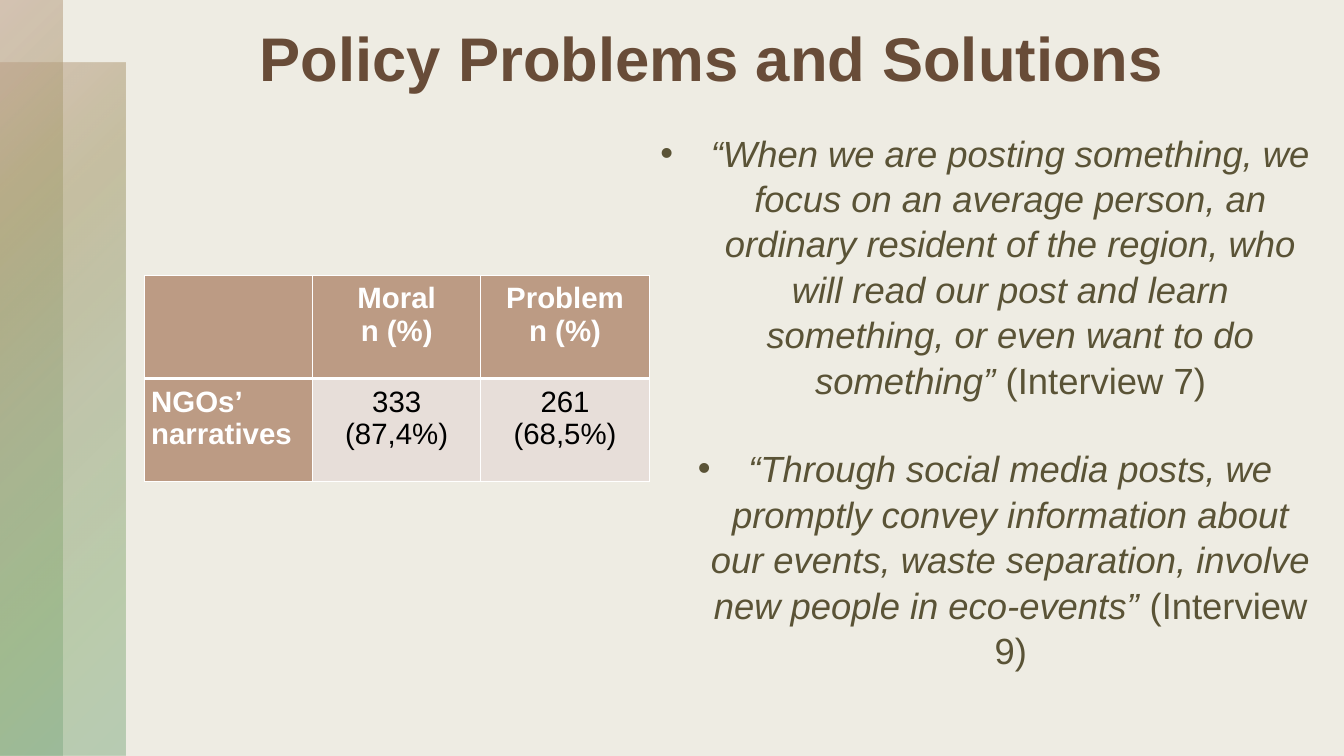
from dataclasses import dataclass
from typing import Any

import lxml.etree
import pptx
import pptx.dml.color
import pptx.enum.shapes
import pptx.enum.text
import pptx.oxml
import pptx.oxml.ns
import pptx.util

Inches = pptx.util.Inches
Pt = pptx.util.Pt
qn = pptx.oxml.ns.qn
ALIGN = pptx.enum.text.PP_ALIGN


@dataclass(frozen=True)
class Theme:
    font: str = "Arial"
    background: str = "EEECE3"
    title: str = "684C38"
    quote: str = "5A5336"
    header: str = "BC9B84"
    value: str = "E7DED9"
    white: str = "FFFFFF"
    black: str = "000000"
    title_size: int = 44
    quote_size: int = 26
    table_size: int = 21


@dataclass(frozen=True)
class GradientStop:
    percent: int
    colour: str
    opacity: int


@dataclass(frozen=True)
class Band:
    left: float
    top: float
    width: float
    height: float


@dataclass(frozen=True)
class Quote:
    words: str
    source: str
    space_before: int = 0


THEME = Theme()
STOPS = (
    GradientStop(0, "BC9B84", 50),
    GradientStop(25, "ABA175", 60),
    GradientStop(50, "9BA57D", 55),
    GradientStop(81, "88AC75", 50),
    GradientStop(99, "81AC84", 50),
)
BANDS = (Band(0, 0.62, 1.24, 6.88), Band(0, 0, 0.62, 7.5))
ROWS = (
    ((), ("Moral", "n (%)"), ("Problem", "n (%)")),
    (("NGOs’ narratives",), ("333 (87,4%)",), ("261 (68,5%)",)),
)
QUOTES = (
    Quote(
        "“When we are posting something, we focus on an average person, an ordinary "
        "resident of the region, who will read our post and learn something, or even "
        "want to do something” ",
        "(Interview 7)",
    ),
    Quote(
        "“Through social media posts, we promptly convey information about our events, "
        "waste separation, involve new people in eco-events” ",
        "(Interview 9)",
        space_before=31,
    ),
)


def rgb(colour: str) -> pptx.dml.color.RGBColor:
    return pptx.dml.color.RGBColor.from_string(colour)


def add_text(para: Any, text: str, *, size: int, colour: str,
             bold: bool = False, italic: bool = False) -> None:
    span = para.add_run()
    span.text = text
    span.font.name = THEME.font
    span.font.size = Pt(size)
    span.font.bold = bold
    span.font.italic = italic
    span.font.color.rgb = rgb(colour)


def add_band(page: Any, band: Band) -> None:
    """Draw a translucent strip shaded outwards from its top left corner."""
    box = page.shapes.add_shape(
        pptx.enum.shapes.MSO_SHAPE.RECTANGLE,
        Inches(band.left), Inches(band.top), Inches(band.width), Inches(band.height))
    box.shadow.inherit = False
    box.line.fill.background()
    stops = "".join(
        f'<a:gs pos="{stop.percent * 1000}"><a:srgbClr val="{stop.colour}">'
        f'<a:alpha val="{stop.opacity * 1000}"/></a:srgbClr></a:gs>' for stop in STOPS)
    gradient = pptx.oxml.parse_xml(
        f'<a:gradFill {pptx.oxml.ns.nsdecls("a")} rotWithShape="1"><a:gsLst>{stops}</a:gsLst>'
        '<a:path path="circle"><a:fillToRect r="100000" b="100000"/></a:path></a:gradFill>')
    box._element.spPr.find(qn("a:prstGeom")).addnext(gradient)


def set_borders(cell: Any, top: int, bottom: int) -> None:
    properties = cell._tc.get_or_add_tcPr()
    widths = {"lnL": 1, "lnR": 1, "lnT": top, "lnB": bottom}
    for index, (side, width) in enumerate(widths.items()):
        properties.insert(index, pptx.oxml.parse_xml(
            f'<a:{side} {pptx.oxml.ns.nsdecls("a")} w="{Pt(width)}"><a:solidFill>'
            f'<a:srgbClr val="{THEME.white}"/></a:solidFill></a:{side}>'))


def add_results(page: Any) -> None:
    table = page.shapes.add_table(
        len(ROWS), len(ROWS[0]), Inches(1.43), Inches(2.73), Inches(5.01), Inches(2.05)).table
    table.horz_banding = False
    for row_index, row in enumerate(ROWS):
        for column_index, lines in enumerate(row):
            cell = table.cell(row_index, column_index)
            heading = row_index == 0 or column_index == 0
            cell.margin_left = cell.margin_right = Inches(0.07)
            cell.margin_top = cell.margin_bottom = Inches(0.07)
            cell.fill.solid()
            cell.fill.fore_color.rgb = rgb(THEME.header if heading else THEME.value)
            set_borders(cell, top=3 if row_index else 1, bottom=1 if row_index else 3)
            for index, line in enumerate(lines):
                frame = cell.text_frame
                para = frame.add_paragraph() if index else frame.paragraphs[0]
                para.alignment = ALIGN.CENTER if column_index else ALIGN.LEFT
                add_text(para, line, size=THEME.table_size, bold=heading,
                         colour=THEME.white if heading else THEME.black)


def set_bullet(para: Any) -> None:
    properties = para._p.get_or_add_pPr()
    properties.set("marL", str(Inches(0.5)))
    properties.set("indent", str(Inches(-0.5)))
    lxml.etree.SubElement(properties, qn("a:buFont")).set("typeface", THEME.font)
    lxml.etree.SubElement(properties, qn("a:buChar")).set("char", "•")


def add_quotes(page: Any) -> None:
    box = page.shapes.add_textbox(Inches(6.44), Inches(1.23), Inches(6.67), Inches(5.65))
    frame = box.text_frame
    frame.word_wrap = True
    for index, quote in enumerate(QUOTES):
        para = frame.add_paragraph() if index else frame.paragraphs[0]
        para.alignment = ALIGN.CENTER
        para.line_spacing = 1.04
        para.space_before = Pt(quote.space_before)
        set_bullet(para)
        for text, italic in ((quote.words, True), (quote.source, False)):
            add_text(para, text, size=THEME.quote_size, colour=THEME.quote, italic=italic)


def format_title(page: Any) -> None:
    title = page.shapes.title
    title.left, title.top = Inches(1.88), Inches(0.15)
    title.width, title.height = Inches(10.37), Inches(1.7)
    frame = title.text_frame
    frame.word_wrap = True
    frame.vertical_anchor = pptx.enum.text.MSO_ANCHOR.TOP
    para = frame.paragraphs[0]
    para.alignment = ALIGN.CENTER
    add_text(para, "Policy Problems and Solutions",
             size=THEME.title_size, colour=THEME.title, bold=True)


def main() -> None:
    deck = pptx.Presentation()
    deck.slide_width, deck.slide_height = Inches(13.33), Inches(7.5)
    page = deck.slides.add_slide(deck.slide_layouts.get_by_name("Title Only"))
    page.background.fill.solid()
    page.background.fill.fore_color.rgb = rgb(THEME.background)
    for band in BANDS:
        add_band(page, band)
    add_results(page)
    add_quotes(page)
    format_title(page)
    deck.save("out.pptx")


if __name__ == "__main__":
    main()
